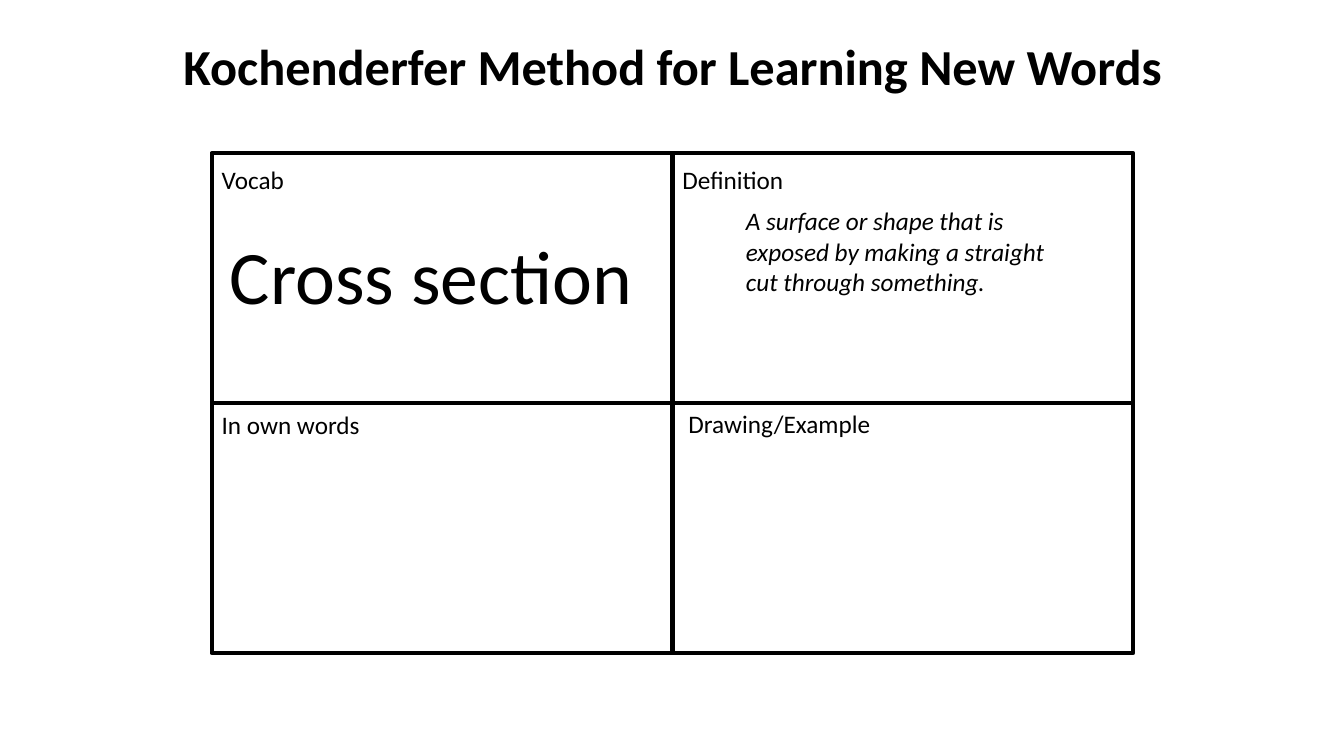
from dataclasses import dataclass
from itertools import product

from pptx import Presentation
from pptx.dml.color import RGBColor
from pptx.enum.shapes import MSO_SHAPE as Shape
from pptx.enum.text import MSO_AUTO_SIZE as AutoSize
from pptx.slide import Slide
from pptx.util import Inches, Pt

BLACK = "000000"
FONT = "Calibri"
GRID_LEFT, GRID_TOP = 2.1, 1.52
CELL_WIDTH, CELL_HEIGHT = 4.57, 2.48


@dataclass
class Label:
    text: str
    left: float
    top: float
    width: float
    height: float = 0.4
    size: int = 18
    bold: bool = False
    italic: bool = False
    wrap: bool = False


TITLE = Label("Kochenderfer Method for Learning New Words", 1.72, 0.3, 10.02, 0.71, size=36, bold=True)
WORD = Label("Cross section", 2.18, 2.22, 4.41, 1.01, size=54)
HEADINGS = [
    Label("Vocab", 2.1, 1.58, 0.83),
    Label("Definition", 6.67, 1.58, 1.22),
    Label("In own words", 2.1, 4.01, 1.59),
    Label("Drawing/Example", 6.73, 4, 2.02),
]
DEFINITION = Label(
    "A surface or shape that is exposed by making a straight cut through something.",
    7.3, 1.99, 3.3, 1.31, italic=True, wrap=True,
)


def color(value: str) -> RGBColor:
    return RGBColor.from_string(value)


def draw_label(page: Slide, label: Label) -> None:
    box = page.shapes.add_textbox(
        Inches(label.left), Inches(label.top), Inches(label.width), Inches(label.height)
    )
    frame = box.text_frame
    frame.text = label.text
    frame.word_wrap = label.wrap
    frame.auto_size = AutoSize.SHAPE_TO_FIT_TEXT
    font = frame.paragraphs[0].runs[0].font
    font.name = FONT
    font.size = Pt(label.size)
    font.bold = label.bold
    font.italic = label.italic
    font.color.rgb = color(BLACK)


def draw_cell(page: Slide, row: int, column: int) -> None:
    cell = page.shapes.add_shape(
        Shape.RECTANGLE,
        Inches(GRID_LEFT + column * CELL_WIDTH),
        Inches(GRID_TOP + row * CELL_HEIGHT),
        Inches(CELL_WIDTH),
        Inches(CELL_HEIGHT),
    )
    cell.shadow.inherit = False
    cell.fill.background()
    cell.line.color.rgb = color(BLACK)
    cell.line.width = Pt(3)


def main() -> None:
    deck = Presentation()
    deck.slide_width, deck.slide_height = Inches(13.33), Inches(7.5)
    page = deck.slides.add_slide(deck.slide_layouts[6])
    for label in (TITLE, WORD):
        draw_label(page, label)
    for row, column in product(range(2), repeat=2):
        draw_cell(page, row, column)
    for label in (*HEADINGS, DEFINITION):
        draw_label(page, label)
    deck.save("out.pptx")


if __name__ == "__main__":
    main()
